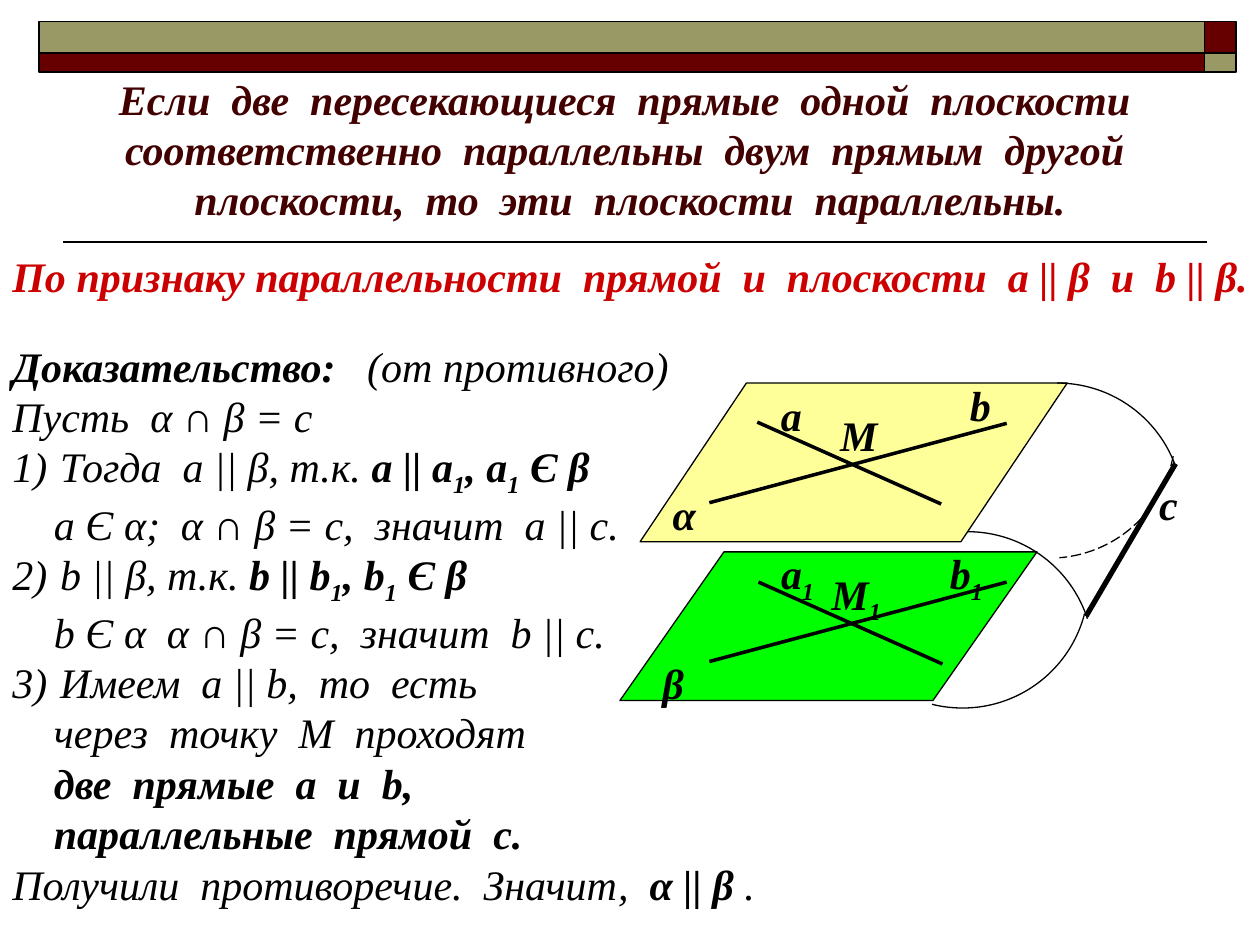
from lxml.etree import SubElement
from pptx import Presentation
from pptx.dml.color import RGBColor
from pptx.enum.dml import MSO_LINE_DASH_STYLE as Dash
from pptx.enum.shapes import MSO_CONNECTOR, MSO_SHAPE as Shape
from pptx.enum.text import MSO_ANCHOR, MSO_AUTO_SIZE as AutoSize, PP_ALIGN
from pptx.oxml.ns import qn
from pptx.util import Inches, Pt

THEME = {
    "font": "Times New Roman", "size": 24,
    "black": "000000", "title": "420000", "claim": "CC0000",
    "olive": "999966", "maroon": "660000",
    "alpha": "FFFF99", "beta": "00FF00",
}

# In all texts *...* is bold and _x makes the character x a subscript.
TITLE = ("*Если  две  пересекающиеся  прямые  одной  плоскости  "
         "соответственно  параллельны  двум  прямым  другой  "
         "плоскости,  то  эти  плоскости  параллельны.*")
CLAIM = "*По признаку параллельности  прямой  и  плоскости  а || β  и  b || β.*"

# (kind of line, text); a number is the step of the proof
PROOF = [
    ("plain", "*Доказательство:   *(от противного)"),
    ("plain", "Пусть  α ∩ β = с"),
    (1, "Тогда  а || β, т.к. *a || a_1, а_1 Є β*"),
    ("indented", "а Є α;  α ∩ β = с,  значит  а || с."),
    (2, "b || β, т.к. *b || b_1, b_1 Є β*"),
    ("indented", "b Є α  α ∩ β = с,  значит  b || с."),
    (3, "Имеем  а || b,  то  есть"),
    ("indented", "через  точку  М  проходят"),
    ("indented", "*две  прямые  а  и  b,*"),
    ("indented", "*параллельные  прямой  с.*"),
    ("plain", "Получили  противоречие.  Значит,  *α || β* ."),
]
HANGING, INDENT = 0.38, 0.33

# Header band: two columns by two rows in alternating colours
BAND_COLUMNS = [(0.31, 9.25), (9.56, 0.25)]
BAND_ROWS = [(0.17, 0.25), (0.42, 0.15)]

# (left, top, width, height), slant, colour
PLANES = [
    ((4.92, 4.38, 3.31, 1.18), 0.7, "beta"),
    ((5.08, 3.04, 3.39, 1.26), 0.67, "alpha"),
]
# (from, to), line width
LINES = [
    ((0.5, 1.92), (9.58, 1.92), 1),
    ((5.63, 3.99), (7.99, 3.36), 2),
    ((5.63, 5.25), (7.99, 4.62), 2),
    ((6.01, 3.35), (7.47, 4.0), 2),
    ((6.02, 4.62), (7.48, 5.27), 2),
    ((9.33, 3.68), (8.62, 4.89), 3),
]
# centre, start and end in degrees clockwise, dash; all have the same radius
ARC_RADIUS = 1
ARCS = [
    ((8.39, 4.04), 270, 339.5, None),
    ((8.33, 3.43), 11, 85.5, Dash.LONG_DASH),
    ((7.68, 5.22), 270, 342, None),
    ((7.64, 4.62), 14.5, 104, None),
]
# text, left, top, width
LABELS = [
    ("α", 5.24, 3.83, 0.39), ("β", 5.16, 5.17, 0.37),
    ("а", 6.1, 3.04, 0.37), ("b", 7.6, 2.96, 0.37), ("М", 6.57, 3.2, 0.5),
    ("b_1", 7.44, 4.3, 0.48), ("а_1", 6.1, 4.3, 0.48), ("М_1", 6.5, 4.46, 0.61),
    ("с", 9.1, 3.75, 0.35),
]
LABEL_HEIGHT = 0.5


def color(name):
    return RGBColor.from_string(THEME[name])


def split_runs(text):
    """Yield (text, bold, subscript) for each marked part."""
    for i, part in enumerate(text.split("*")):
        first, *rest = part.split("_")
        pieces = [(first, False)]
        for piece in rest:
            pieces += [(piece[0], True), (piece[1:], False)]
        for piece, subscript in pieces:
            if piece:
                yield piece, i % 2 == 1, subscript


def write(p, text, color_name="black"):
    for piece, bold, subscript in split_runs(text):
        r = p.add_run()
        r.text = piece
        formats = {"name": THEME["font"], "size": Pt(THEME["size"]),
                   "bold": bold, "italic": True}
        for key, value in formats.items():
            setattr(r.font, key, value)
        r.font.color.rgb = color(color_name)
        if subscript:
            r._r.get_or_add_rPr().set("baseline", "-25000")


def add_text(slide, box, wrap=False):
    tf = slide.shapes.add_textbox(*map(Inches, box)).text_frame
    tf.word_wrap = wrap
    tf.auto_size = AutoSize.SHAPE_TO_FIT_TEXT
    return tf


def add_shape(slide, kind, box, fill=None, width=0.75):
    sp = slide.shapes.add_shape(kind, *map(Inches, box))
    sp.shadow.inherit = False
    if fill:
        sp.fill.solid()
        sp.fill.fore_color.rgb = color(fill)
    else:
        sp.fill.background()
    sp.line.color.rgb = color("black")
    sp.line.width = Pt(width)
    return sp


def add_line(slide, start, end, width):
    line = slide.shapes.add_connector(
        MSO_CONNECTOR.STRAIGHT, *map(Inches, start + end))
    line.line.color.rgb = color("black")
    line.line.width = Pt(width)
    SubElement(line._element.spPr, qn("a:effectLst"))


def add_arc(slide, center, start, end, dash):
    x, y = (c - ARC_RADIUS for c in center)
    arc = add_shape(slide, Shape.ARC, (x, y, 2 * ARC_RADIUS, 2 * ARC_RADIUS))
    for i, degrees in enumerate((start, end)):
        arc.adjustments[i] = degrees * 0.6  # 60000 units a degree, in 100000ths
    if dash:
        arc.line.dash_style = dash


def set_indent(p, kind):
    """Set the margins of a proof line and number it if it is a step."""
    pPr = p._p.get_or_add_pPr()
    left, first = (INDENT, 0) if kind == "indented" else (HANGING, -HANGING)
    pPr.set("marL", str(Inches(left)))
    pPr.set("indent", str(Inches(first)))
    if isinstance(kind, int):
        SubElement(pPr, qn("a:buAutoNum"), type="arabicParenR", startAt=str(kind))


def add_title(slide):
    title = slide.shapes.title
    box = zip(("left", "top", "width", "height"), (0.5, 0.58, 9, 1.25))
    for key, value in box:
        setattr(title, key, Inches(value))
    tf = title.text_frame
    tf.auto_size = AutoSize.NONE
    tf.vertical_anchor = MSO_ANCHOR.BOTTOM
    tf.paragraphs[0].alignment = PP_ALIGN.CENTER
    write(tf.paragraphs[0], TITLE, "title")


def add_proof(slide):
    tf = add_text(slide, (0, 2.65, 7.74, 4.49), wrap=True)
    for i, (kind, text) in enumerate(PROOF):
        p = tf.add_paragraph() if i else tf.paragraphs[0]
        set_indent(p, kind)
        write(p, text)


def main():
    prs = Presentation()
    prs.slide_width, prs.slide_height = Inches(10), Inches(7.5)
    slide = prs.slides.add_slide(prs.slide_layouts[5])

    for row, (y, h) in enumerate(BAND_ROWS):
        for col, (x, w) in enumerate(BAND_COLUMNS):
            fill = ("olive", "maroon")[(row + col) % 2]
            add_shape(slide, Shape.RECTANGLE, (x, y, w, h), fill, 1)
    add_title(slide)
    add_proof(slide)
    for box, slant, fill in PLANES:
        add_shape(slide, Shape.PARALLELOGRAM, box, fill).adjustments[0] = slant
    for line in LINES:
        add_line(slide, *line)
    for arc in ARCS:
        add_arc(slide, *arc)
    for text, x, y, w in LABELS:
        tf = add_text(slide, (x, y, w, LABEL_HEIGHT))
        write(tf.paragraphs[0], f"*{text}*")
    tf = add_text(slide, (0, 1.94, 10.2, LABEL_HEIGHT))
    write(tf.paragraphs[0], CLAIM, "claim")

    prs.save("out.pptx")


if __name__ == "__main__":
    main()
